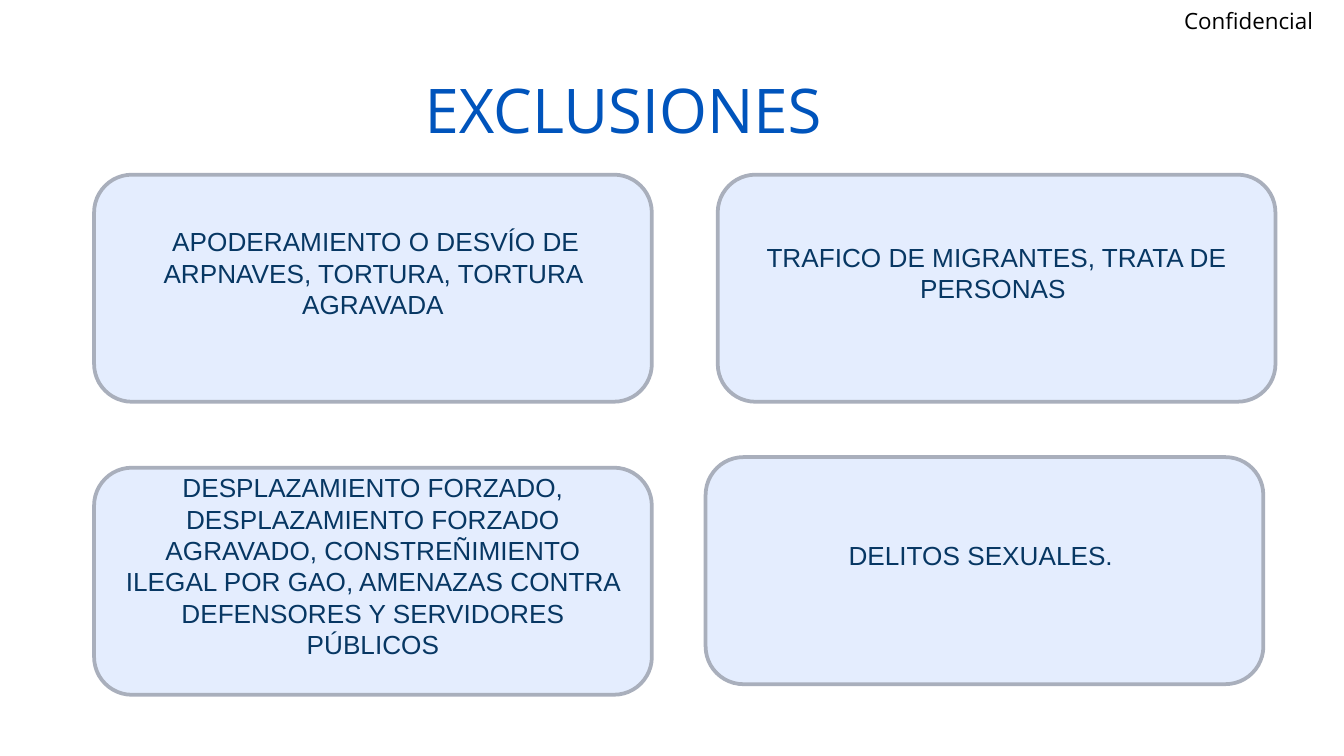
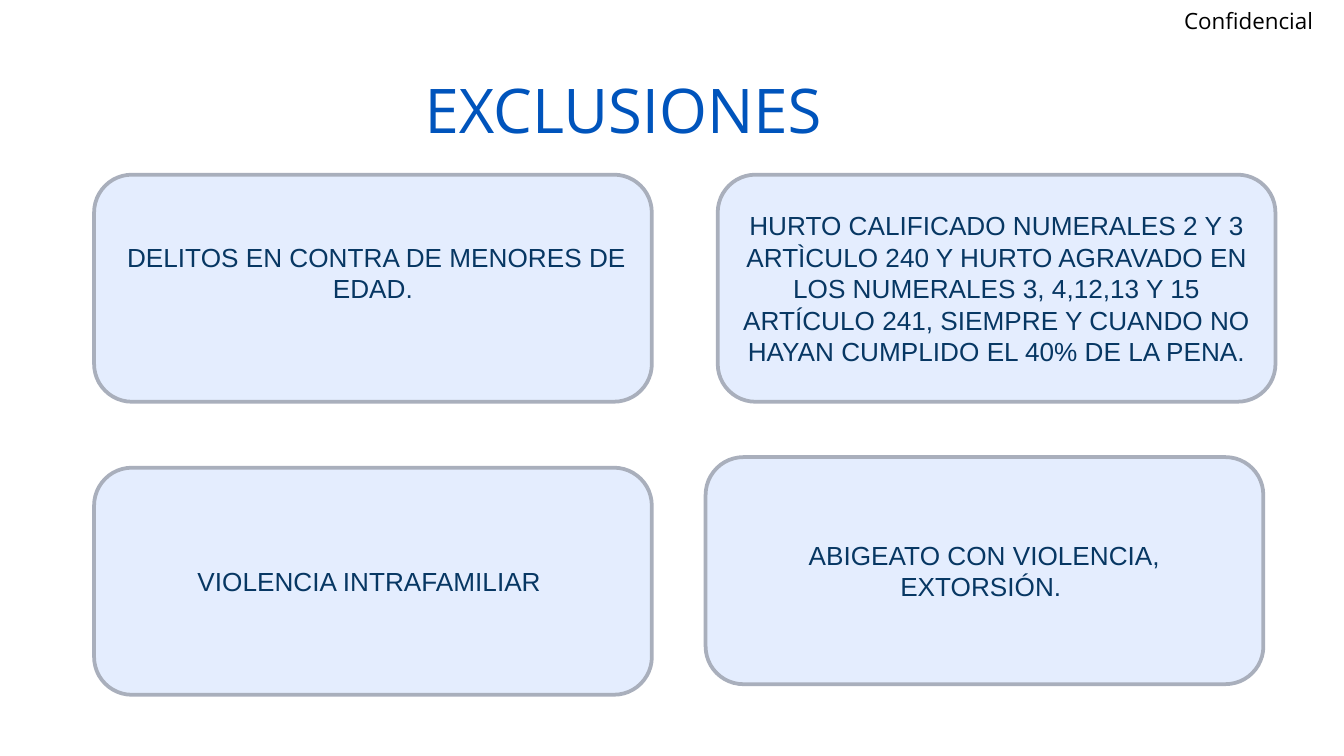
from pptx import Presentation
from pptx.dml.color import RGBColor
from pptx.enum.shapes import MSO_SHAPE
from pptx.enum.text import MSO_ANCHOR, PP_ALIGN
from pptx.util import Inches, Pt

WIDTH = Inches(10)
HEIGHT = WIDTH * 9 // 16
COLORS = {
    "title": "0054BC",
    "label": "000000",
    "card": "E4EDFE",
    "border": "A9AFBC",
    "text": "073763",
}
CARD_SIZE = (41.5, 30.04)
CARD_CORNERS = [(7, 23.11), (53.4, 23.11), (7, 61.87), (52.5, 60.47)]
RAISED = 0.23

EXCLUSIONS = [
    [
        (" APODERAMIENTO O DESVÍO DE ARPNAVES, TORTURA, TORTURA AGRAVADA", RAISED),
        ("TRAFICO DE MIGRANTES, TRATA DE PERSONAS ", RAISED),
        ("DESPLAZAMIENTO FORZADO, DESPLAZAMIENTO FORZADO AGRAVADO, "
         "CONSTREÑIMIENTO ILEGAL POR GAO, AMENAZAS CONTRA DEFENSORES "
         "Y SERVIDORES PÚBLICOS", RAISED),
        ("DELITOS SEXUALES. ", RAISED),
    ],
    [
        (" DELITOS EN CONTRA DE MENORES DE EDAD.", RAISED),
        ("HURTO CALIFICADO NUMERALES 2 Y 3 ARTÌCULO 240 Y HURTO AGRAVADO "
         "EN LOS NUMERALES 3, 4,12,13 Y 15 ARTÍCULO 241, SIEMPRE Y CUANDO "
         "NO HAYAN CUMPLIDO EL 40% DE LA PENA.", 0),
        ("VIOLENCIA INTRAFAMILIAR ", 0),
        ("ABIGEATO CON VIOLENCIA, EXTORSIÓN. ", 0),
    ],
]


def color(name):
    """Return the named palette colour."""
    return RGBColor.from_string(COLORS[name])


def area(left, top, width, height):
    """Turn percentages of the slide into lengths."""
    return (int(WIDTH * left / 100), int(HEIGHT * top / 100),
            int(WIDTH * width / 100), int(HEIGHT * height / 100))


def write(frame, words, font, size, ink):
    """Write one vertically centred paragraph and return it."""
    frame.word_wrap = True
    frame.vertical_anchor = MSO_ANCHOR.MIDDLE
    paragraph = frame.paragraphs[0]
    paragraph.text = words
    paragraph.font.name = font
    paragraph.font.size = Pt(size)
    paragraph.font.color.rgb = color(ink)
    return paragraph


def add_heading(slide, words, place, size, ink):
    """Add a left-aligned line of heading text."""
    frame = slide.shapes.add_textbox(*area(*place)).text_frame
    frame.margin_left = frame.margin_right = Inches(0.07)
    frame.margin_top = frame.margin_bottom = Inches(0.04)
    write(frame, words, "Open Sans", size, ink).line_spacing = 0.9


def add_card(slide, words, corner, lift):
    """Add a rounded card whose text sits above the centre by half the lift."""
    card = slide.shapes.add_shape(
        MSO_SHAPE.ROUNDED_RECTANGLE, *area(*corner, *CARD_SIZE))
    card.shadow.inherit = False
    card.fill.solid()
    card.fill.fore_color.rgb = color("card")
    card.line.color.rgb = color("border")
    card.line.width = Pt(2)
    card.text_frame.margin_bottom = Inches(0.05 + lift)
    write(card.text_frame, words, "Arial", 14, "text").alignment = PP_ALIGN.CENTER


def add_exclusions(deck, cards):
    """Add one slide with the shared headings and four cards."""
    slide = deck.slides.add_slide(deck.slide_layouts[6])
    add_heading(slide, "Confidencial", (87.4, 0.18, 12.6, 5.51), 12, "label")
    add_heading(slide, "EXCLUSIONES", (30.9, 5.33, 62.3, 19.38), 33, "title")
    for (words, lift), corner in zip(cards, CARD_CORNERS):
        add_card(slide, words, corner, lift)


def main():
    """Build and save the deck."""
    deck = Presentation()
    deck.slide_width, deck.slide_height = WIDTH, HEIGHT
    for cards in EXCLUSIONS:
        add_exclusions(deck, cards)
    deck.save("out.pptx")


if __name__ == "__main__":
    main()
